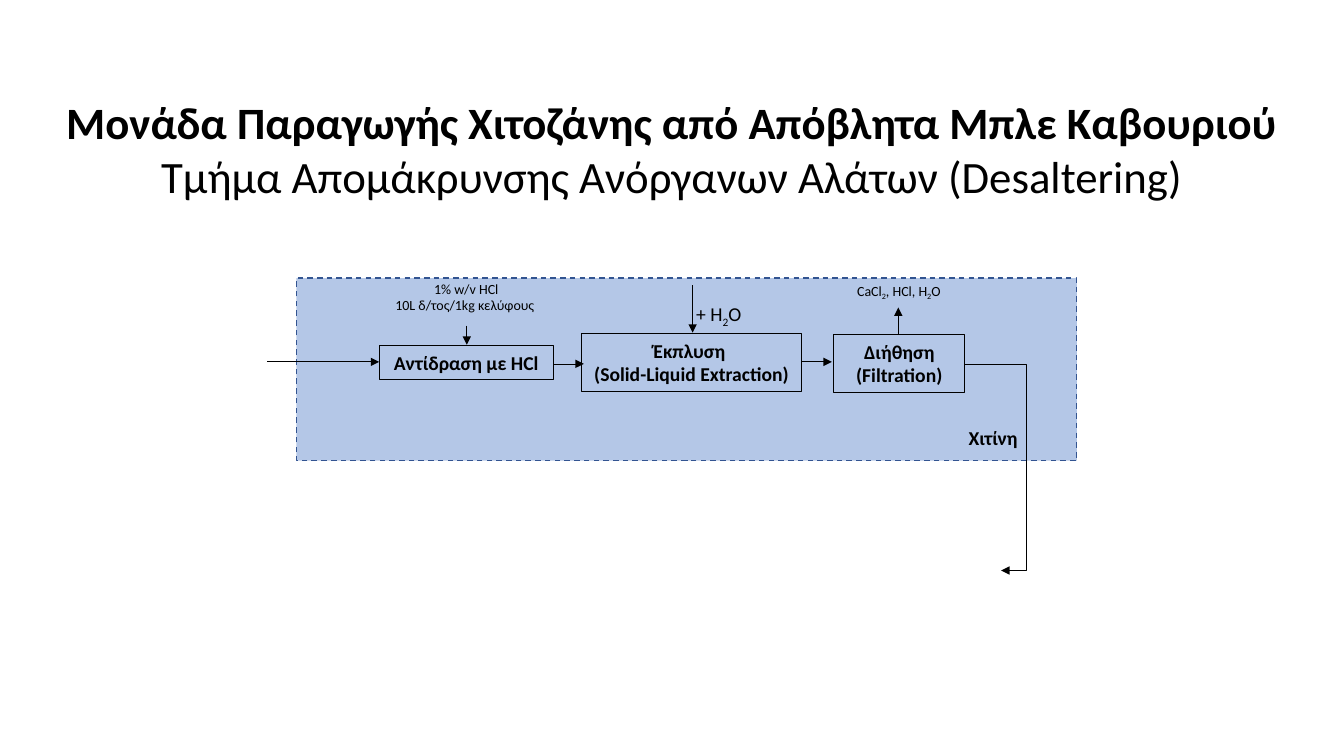
from dataclasses import dataclass
from pptx import Presentation
from pptx.dml.color import RGBColor
from pptx.enum.dml import MSO_LINE
from pptx.enum.shapes import MSO_CONNECTOR, MSO_SHAPE
from pptx.enum.text import MSO_ANCHOR, MSO_AUTO_SIZE, PP_ALIGN
from pptx.oxml.ns import qn
from pptx.oxml.xmlchemy import OxmlElement
from pptx.util import Inches, Pt


@dataclass(frozen=True)
class Theme:
    font: str = "Calibri"
    ink: RGBColor = RGBColor(0, 0, 0)
    zone: RGBColor = RGBColor(0xB4, 0xC7, 0xE7)
    border: RGBColor = RGBColor(0x32, 0x54, 0x91)
    title: int = 32
    body: int = 14
    small: int = 10


T = Theme()
TITLE = ["Μονάδα Παραγωγής Χιτοζάνης από Απόβλητα Μπλε Καβουριού",
         "Τμήμα Απομάκρυνσης Ανόργανων Αλάτων (Desaltering)"]
ZONE = (2.94, 2.76, 7.74, 1.81)
STEPS = [
    ((3.76, 3.43, 1.73, 0.34), [["Αντίδραση με HCl"]]),
    ((5.77, 3.31, 2.18, 0.57), [["Έκπλυση "], ["(Solid-Liquid Extraction)"]]),
    ((8.27, 3.32, 1.3, 0.57), [["Διήθηση (Filtration)"]]),
]
LABELS = [
    ((3.13, 2.73, 3.02, 0.44), [["1% w/v HCl "], ["10L δ/τος/1kg κελύφους  "]], T.small, False),
    ((8.26, 2.75, 1.31, 0.27), [["CaCl", "2", ", HCl, H", "2", "O"]], T.small, False),
    ((6.8, 2.95, 0.66, 0.34), [["+ Η", "2", "Ο"]], T.body, False),
    ((9.49, 4.18, 0.72, 0.34), [["Χιτίνη"]], T.body, True),
]
ARROWS = [
    ((2.65, 3.59), (3.76, 3.59)),
    ((5.49, 3.61), (5.79, 3.61)),
    ((7.95, 3.59), (8.25, 3.59)),
    ((4.63, 3.23), (4.63, 3.42)),
    ((6.87, 2.83), (6.87, 3.3)),
    ((8.91, 3.32), (8.91, 3.05)),
]
OUTLET = [(9.57, 3.61), (10.18, 3.61), (10.18, 5.66), (9.93, 5.66)]


def inches(values):
    return [Inches(v) for v in values]


def add_run(p, text, size, bold):
    r = p.add_run()
    r.text = text
    r.font.name, r.font.size, r.font.bold = T.font, Pt(size), bold
    r.font.color.rgb = T.ink
    if text == "2":
        r._r.get_or_add_rPr().set("baseline", "-25000")


def write(tf, lines, size, bold, anchor=MSO_ANCHOR.TOP):
    tf.word_wrap, tf.auto_size, tf.vertical_anchor = True, MSO_AUTO_SIZE.NONE, anchor
    for i, runs in enumerate(lines):
        p = tf.paragraphs[0] if i == 0 else tf.add_paragraph()
        p.alignment = PP_ALIGN.CENTER
        for text in runs:
            add_run(p, text, size, bold)


def add_box(s, box, color, width):
    sp = s.shapes.add_shape(MSO_SHAPE.RECTANGLE, *inches(box))
    sp.shadow.inherit = False
    sp.fill.background()
    sp.line.color.rgb, sp.line.width = color, Pt(width)
    return sp


def style_arrow(sp):
    sp.line.color.rgb, sp.line.width = T.ink, Pt(0.5)
    tail = OxmlElement("a:tailEnd")
    tail.set("type", "triangle")
    sp._element.spPr.find(qn("a:ln")).append(tail)


def add_title(s):
    sp = s.shapes.title
    sp.left, sp.top, sp.width, sp.height = inches((0, 0.89, 13.33, 1.18))
    tf = sp.text_frame
    write(tf, [[line] for line in TITLE], T.title, False)
    tf.paragraphs[0].runs[0].font.bold = True


def add_zone(s):
    sp = add_box(s, ZONE, T.border, 1)
    sp.fill.solid()
    sp.fill.fore_color.rgb = T.zone
    sp.line.dash_style = MSO_LINE.DASH


def add_arrow(s, start, end):
    c = s.shapes.add_connector(MSO_CONNECTOR.STRAIGHT, *inches(start + end))
    style_arrow(c)
    c._element.spPr.append(OxmlElement("a:effectLst"))


def add_outlet(s):
    start, *rest = [inches(point) for point in OUTLET]
    fb = s.shapes.build_freeform(*start)
    fb.add_line_segments(rest, close=False)
    sp = fb.convert_to_shape()
    sp.shadow.inherit = False
    sp.fill.background()
    style_arrow(sp)


def main():
    """Build the desalting flow slide."""
    prs = Presentation()
    prs.slide_width, prs.slide_height = inches((13.33, 7.5))
    s = prs.slides.add_slide(prs.slide_layouts[5])
    add_title(s)
    add_zone(s)
    for box, lines in STEPS:
        sp = add_box(s, box, T.ink, 0.75)
        write(sp.text_frame, lines, T.body, True)
    for box, lines, size, bold in LABELS:
        write(s.shapes.add_textbox(*inches(box)).text_frame, lines, size, bold)
    for start, end in ARROWS:
        add_arrow(s, start, end)
    add_outlet(s)
    prs.save("out.pptx")


if __name__ == "__main__":
    main()
